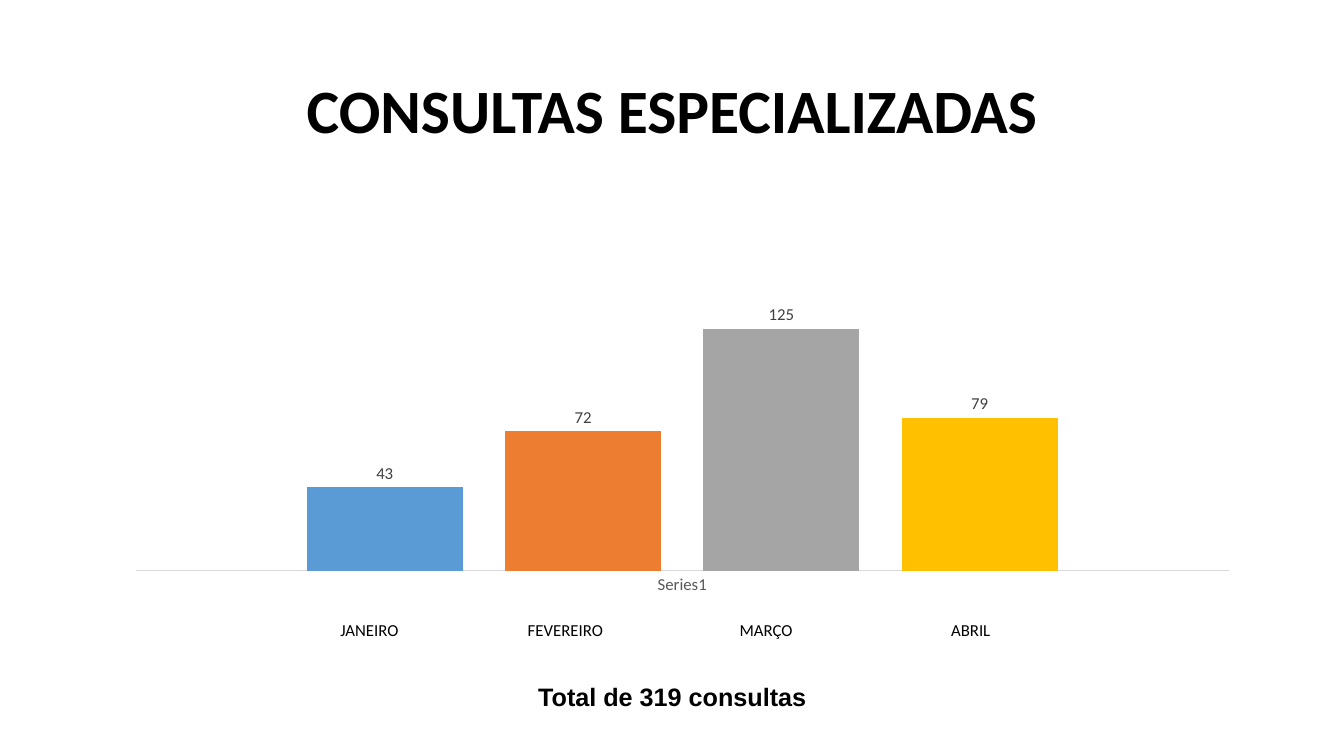
from lxml.etree import SubElement
from pptx import Presentation
from pptx.chart.data import CategoryChartData
from pptx.dml.color import RGBColor
from pptx.enum.chart import XL_CHART_TYPE, XL_LABEL_POSITION, XL_TICK_MARK
from pptx.enum.text import MSO_ANCHOR, MSO_AUTO_SIZE, PP_ALIGN
from pptx.oxml.ns import qn
from pptx.util import Cm, Pt

CONSULTATIONS = [
    ("JANEIRO", 43, "5B9BD5"),
    ("FEVEREIRO", 72, "ED7D31"),
    ("MARÇO", 125, "A5A5A5"),
    ("ABRIL", 79, "FFC000"),
]
MONTH_STOPS = (4.72, 10.06, 15.39)
PLOT_AREA = {"x": 0.037, "y": 0.126, "w": 0.943, "h": 0.807}
TITLE_FONT = {"name": "Calibri", "size": Pt(44), "bold": True}
TOTAL_FONT = {"name": "Arial", "size": Pt(18), "bold": True}
LABEL_FONT = {"name": "Calibri", "size": Pt(12), "bold": False}
CENTERED = {"alignment": PP_ALIGN.CENTER, "line_spacing": 0.9}
MIDDLE = {
    "word_wrap": True,
    "auto_size": MSO_AUTO_SIZE.NONE,
    "vertical_anchor": MSO_ANCHOR.MIDDLE,
}


def apply(target, values):
    """Set every attribute named in values on target."""
    for name, value in values.items():
        setattr(target, name, value)


def paint(color_format, hex_color):
    """Give a colour format an RRGGBB colour."""
    color_format.rgb = RGBColor.from_string(hex_color)


def style_font(font, values, hex_color):
    """Apply font values and a colour."""
    apply(font, values)
    paint(font.color, hex_color)


def place(part, box):
    """Move a part to its left, top, width and height in centimetres."""
    apply(part, dict(zip(("left", "top", "width", "height"), map(Cm, box))))


def write_line(part, text, font_values, paragraph_values):
    """Write one black line into a part and return its paragraph."""
    apply(part.text_frame, MIDDLE)
    paragraph = part.text_frame.paragraphs[0]
    apply(paragraph, paragraph_values)
    run = paragraph.add_run()
    run.text = text
    style_font(run.font, font_values, "000000")
    return paragraph


def add_heading(slide, box):
    """Fill the title placeholder."""
    heading = slide.shapes.title
    place(heading, box)
    write_line(heading, "CONSULTAS ESPECIALIZADAS", TITLE_FONT, CENTERED)


def set_plot_area(chart):
    """Fix the inner plot area as fractions of the chart."""
    plot_area = chart.plots[0]._element.getparent()
    for layout in plot_area.findall(qn("c:layout")):
        plot_area.remove(layout)
    layout = SubElement(plot_area, qn("c:layout"))
    plot_area.insert(0, layout)
    manual = SubElement(layout, qn("c:manualLayout"))
    settings = {"layoutTarget": "inner", "xMode": "edge", "yMode": "edge", **PLOT_AREA}
    for tag, value in settings.items():
        SubElement(manual, qn(f"c:{tag}")).set("val", str(value))


def add_consultation_chart(slide, box):
    """Draw one coloured column for each month."""
    consultations = CategoryChartData()
    consultations.categories = ["Series1"]
    for month, count, _ in CONSULTATIONS:
        consultations.add_series(month, [count])
    chart = slide.shapes.add_chart(
        XL_CHART_TYPE.COLUMN_CLUSTERED, *map(Cm, box), consultations
    ).chart
    apply(chart, {"has_legend": False, "has_title": False})
    style_font(chart.font, {"name": "Calibri", "size": Pt(10)}, "000000")
    columns = chart.plots[0]
    apply(columns, {"gap_width": 219, "overlap": -27, "vary_by_categories": False})
    for series, (_, _, hex_color) in zip(columns.series, CONSULTATIONS):
        series.format.fill.solid()
        paint(series.format.fill.fore_color, hex_color)
        labels = series.data_labels
        apply(labels, {"show_value": True, "position": XL_LABEL_POSITION.OUTSIDE_END})
        style_font(labels.font, LABEL_FONT, "404040")
    apply(chart.value_axis, {
        "visible": False,
        "has_major_gridlines": False,
        "minimum_scale": 0,
        "maximum_scale": 140,
    })
    baseline = chart.category_axis
    baseline.major_tick_mark = XL_TICK_MARK.NONE
    style_font(baseline.tick_labels.font, LABEL_FONT, "595959")
    baseline.format.line.width = Pt(0.75)
    paint(baseline.format.line.color, "D9D9D9")
    set_plot_area(chart)


def add_months(slide, box):
    """Write the month names on one line with tab stops."""
    months = slide.shapes.add_textbox(*map(Cm, box))
    names = "\t".join(month for month, _, _ in CONSULTATIONS)
    line = write_line(months, names, LABEL_FONT, {"alignment": PP_ALIGN.LEFT})
    stops = SubElement(line._p.get_or_add_pPr(), qn("a:tabLst"))
    for stop in MONTH_STOPS:
        SubElement(stops, qn("a:tab"), pos=str(Cm(stop)), algn="l")


def add_total(slide, box):
    """Write the total below the chart."""
    total = slide.shapes.add_textbox(*map(Cm, box))
    count = sum(count for _, count, _ in CONSULTATIONS)
    write_line(total, f"Total de {count} consultas", TOTAL_FONT, CENTERED)


def build_consultation_slide(deck, box):
    """Stack title, chart, months and total inside the box."""
    left, top, width, _ = box
    slide = deck.slides.add_slide(deck.slide_layouts[5])
    add_heading(slide, (left, top, width, 3.68))
    add_consultation_chart(slide, (left, top + 5.48, width, 8.48))
    add_total(slide, (left, top + 14.73, width, 3.68))
    add_months(slide, (left + 5.99, top + 14.47, 17.32, 0.76))


def main():
    """Build and save the deck."""
    deck = Presentation()
    apply(deck, {"slide_width": Cm(33.87), "slide_height": Cm(19.05)})
    build_consultation_slide(deck, (2.34, 1.02, 29.21, 18.41))
    deck.save("out.pptx")


if __name__ == "__main__":
    main()
